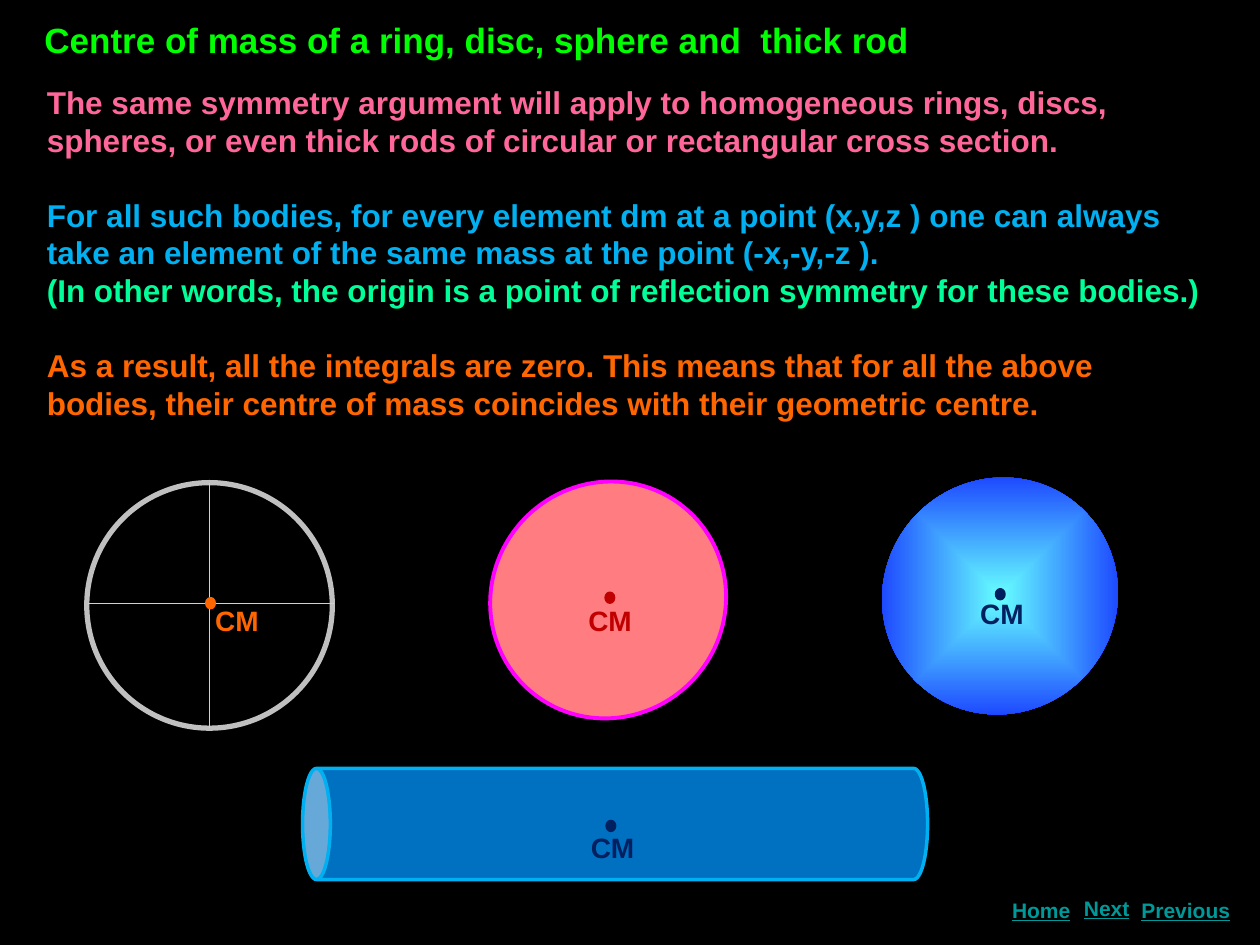
"""Build the slide on the centre of mass of symmetric bodies."""
from dataclasses import dataclass

from lxml import etree
from pptx import Presentation
from pptx import util as u
from pptx.dml.color import RGBColor
from pptx.enum import shapes, text
from pptx.oxml import parse_xml
from pptx.oxml.ns import nsdecls, qn

COLOURS = {
    "black": "000000", "green": "00FF00", "pink": "FF6699", "sky": "00B0F0",
    "mint": "00FF99", "orange": "FF6600", "silver": "C0C0C0", "pale": "B6DCDF",
    "salmon": "FF7C80", "magenta": "FF00FF", "red": "C00000", "navy": "002060",
    "blue": "0070C0", "teal": "009999", "aqua": "66FFFF", "deep": "0000FF",
}
LINE_PITCH = 21.5
LEFT, CENTRE = text.PP_ALIGN.LEFT, text.PP_ALIGN.CENTER


@dataclass
class Passage:
    words: str
    colour: str
    gap: float = 0


@dataclass
class Body:
    kind: shapes.MSO_SHAPE
    box: tuple
    fill: str | None = None
    line: str | None = None
    width: float = 0
    turn: float = 0


@dataclass
class Marker:
    dot: tuple
    label: tuple
    colour: str


@dataclass
class Link:
    words: str
    box: tuple


PASSAGES = [
    Passage("The same symmetry argument will apply to homogeneous rings, discs, spheres, "
            "or even thick rods of circular or rectangular cross section.", "pink"),
    Passage("For all such bodies, for every element dm at a point (x,y,z ) one can always "
            "take an element of the same mass at the point (-x,-y,-z ).", "sky", LINE_PITCH),
    Passage("(In other words, the origin is a point of reflection symmetry for these bodies.)",
            "mint"),
    Passage("As a result, all the integrals are zero. This means that for all the above "
            "bodies, their centre of mass coincides with their geometric centre.",
            "orange", LINE_PITCH),
]
OVAL = shapes.MSO_SHAPE.OVAL
RING = Body(OVAL, (1.75, 9.73, 4.95, 4.95), None, "silver", 3)
SPOKES = [(4.22, 9.73, 4.22, 14.68), (1.78, 12.17, 6.73, 12.17)]
SPHERE = Body(OVAL, (17.81, 9.6, 4.7, 4.83), turn=40.6)
DISC = Body(OVAL, (9.91, 9.68, 4.7, 4.83), "salmon", "magenta", 2.25, 40.6)
ROD = Body(shapes.MSO_SHAPE.CAN, (11.28, 10.31, 2.24, 12.6), "blue", "sky", 2, 270)
MARKERS = [
    Marker((4.17, 12.07), (4.09, 12.04), "orange"),
    Marker((12.22, 11.96), (11.61, 12.04), "red"),
    Marker((20.09, 11.89), (19.51, 11.91), "navy"),
    Marker((12.24, 16.56), (11.66, 16.61), "navy"),
]
LINKS = [
    Link("Home", (20.09, 17.96, 1.8, 0.76)),
    Link("Next", (21.51, 17.93, 1.6, 0.76)),
    Link("Previous", (22.71, 17.96, 2.39, 0.76)),
]


def rgb(name: str) -> RGBColor:
    """Return the named colour."""
    return RGBColor.from_string(COLOURS[name])


def apply(target, values: dict) -> None:
    """Set each attribute of the target from the values."""
    for name, value in values.items():
        setattr(target, name, value)


def place(shape, box: tuple) -> None:
    """Move and size a shape, in centimetres."""
    apply(shape, dict(zip(("left", "top", "width", "height"), map(u.Cm, box))))


def write(para, words: str, size: float, colour: str, align=LEFT, **font) -> None:
    """Fill a paragraph with one bold span."""
    para.alignment = align
    span = para.add_run()
    span.text = words
    apply(span.font, {"name": "Arial", "size": u.Pt(size), "bold": True, **font})
    span.font.color.rgb = rgb(colour)


def set_frame(shape, wrap: bool) -> None:
    """Give a text frame its wrapping and a top anchor."""
    apply(shape.text_frame, {
        "word_wrap": wrap, "auto_size": text.MSO_AUTO_SIZE.NONE,
        "vertical_anchor": text.MSO_ANCHOR.TOP})


def add_label(parent, words: str, box: tuple, size: float, colour: str,
              wrap: bool = False, align=LEFT, **font) -> None:
    """Add a one-line text box."""
    label = parent.add_textbox(*map(u.Cm, box))
    set_frame(label, wrap)
    write(label.text_frame.paragraphs[0], words, size, colour, align, **font)


def add_body(parent, body: Body):
    """Draw a filled or outlined shape."""
    shape = parent.add_shape(body.kind, *map(u.Cm, body.box))
    shape.shadow.inherit = False
    shape.rotation = body.turn
    if body.fill:
        shape.fill.solid()
        shape.fill.fore_color.rgb = rgb(body.fill)
    else:
        shape.fill.background()
    if body.line:
        shape.line.color.rgb = rgb(body.line)
        shape.line.width = u.Pt(body.width)
    else:
        shape.line.fill.background()
    return shape


def add_spoke(parent, ends: tuple) -> None:
    """Draw a thin diameter of the ring."""
    spoke = parent.add_connector(shapes.MSO_CONNECTOR.STRAIGHT, *map(u.Cm, ends))
    spoke.line.color.rgb = rgb("pale")
    spoke.line.width = u.Pt(0.25)
    etree.SubElement(spoke._element.spPr, qn("a:effectLst"))


def add_marker(parent, marker: Marker) -> None:
    """Draw a grouped dot with its CM label."""
    group = parent.add_group_shape().shapes
    add_body(group, Body(OVAL, (*marker.dot, 0.15, 0.18), marker.colour, marker.colour, 2))
    add_label(group, "CM", (*marker.label, 1.4, 0.94), 16, marker.colour)


def shade_sphere(sphere) -> None:
    """Shade a shape from its middle outwards."""
    stops = "".join(
        f'<a:gs pos="{position}"><a:srgbClr val="{COLOURS[name]}"/></a:gs>'
        for position, name in ((0, "aqua"), (100000, "deep")))
    gradient = parse_xml(
        f'<a:gradFill {nsdecls("a")} rotWithShape="0"><a:gsLst>{stops}</a:gsLst>'
        '<a:path path="shape"><a:fillToRect l="50000" t="50000" r="50000" b="50000"/>'
        '</a:path></a:gradFill>')
    properties = sphere._element.spPr
    properties.replace(properties.find(qn("a:noFill")), gradient)


def fill_placeholders(page) -> None:
    """Write the title and the passages."""
    title, argument = page.shapes.title, page.placeholders[1]
    place(title, (0.64, 0.25, 18.06, 1.12))
    set_frame(title, False)
    write(title.text_frame.paragraphs[0],
          "Centre of mass of a ring, disc, sphere and  thick rod", 20, "green")
    place(argument, (0.69, 1.55, 23.8, 7.19))
    set_frame(argument, True)
    frame = argument.text_frame
    for index, passage in enumerate(PASSAGES):
        para = frame.add_paragraph() if index else frame.paragraphs[0]
        write(para, passage.words, 18, passage.colour)
        apply(para, {"line_spacing": u.Pt(LINE_PITCH), "space_before": u.Pt(passage.gap)})
        properties = para._p.get_or_add_pPr()
        properties.set("marL", "0")
        properties.set("indent", "0")
        etree.SubElement(properties, qn("a:buNone"))


def main() -> None:
    """Build and save the deck."""
    deck = Presentation()
    apply(deck, {"slide_width": u.Cm(25.4), "slide_height": u.Cm(19.05)})
    page = deck.slides.add_slide(deck.slide_layouts[1])
    page.background.fill.solid()
    page.background.fill.fore_color.rgb = rgb("black")
    fill_placeholders(page)
    wheel = page.shapes.add_group_shape().shapes
    add_body(wheel, RING)
    for ends in SPOKES:
        add_spoke(wheel, ends)
    shade_sphere(add_body(page.shapes, SPHERE))
    for body in (DISC, ROD):
        add_body(page.shapes, body)
    for marker in MARKERS:
        add_marker(page.shapes, marker)
    for link in LINKS:
        add_label(page.shapes, link.words, link.box, 12, "teal", True, CENTRE, underline=True)
    deck.save("out.pptx")


if __name__ == "__main__":
    main()
